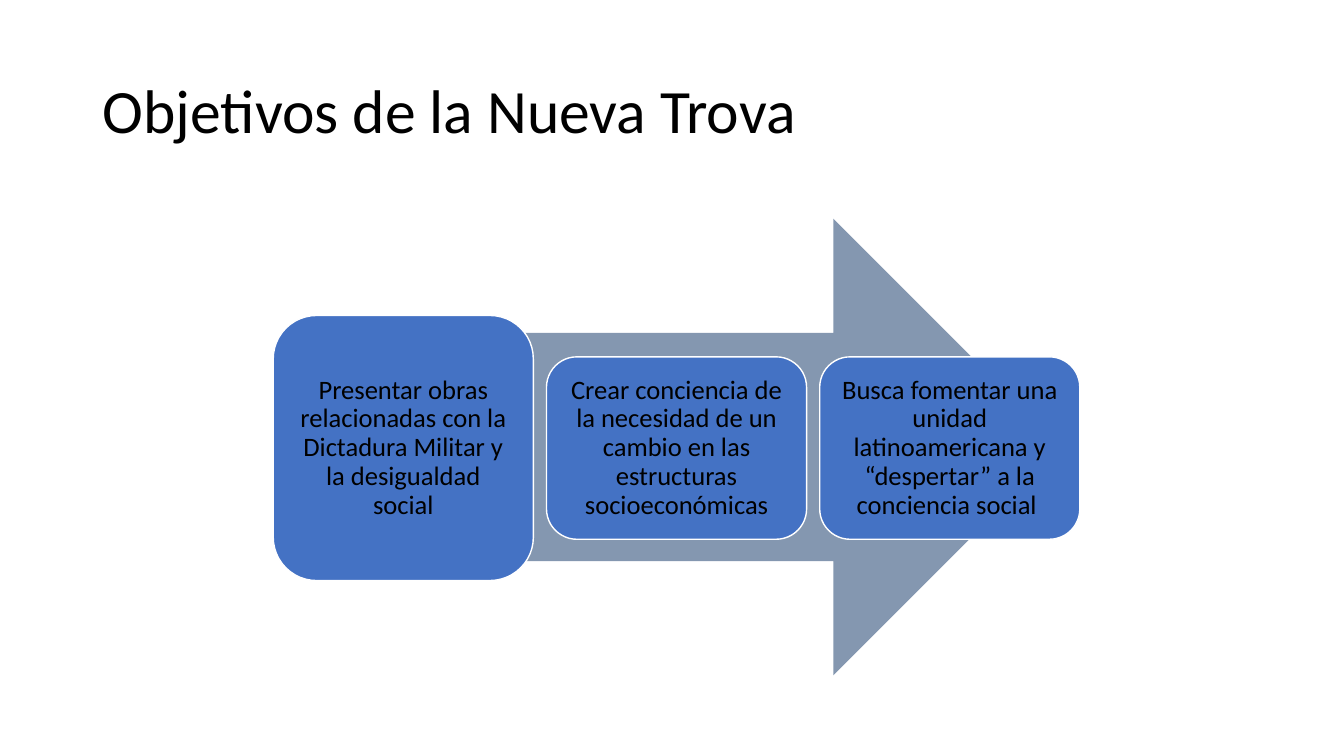
from pptx import Presentation
from pptx import util as u
from pptx.dml.color import RGBColor
from pptx.enum import shapes, text

PX = 9144  # EMU per px, 100 px to the inch
BLACK = RGBColor(0x00, 0x00, 0x00)
WHITE = RGBColor(0xFF, 0xFF, 0xFF)
BLUE = RGBColor(0x44, 0x72, 0xC4)
SLATE = RGBColor(0x84, 0x97, 0xB0)


def px(*lengths):
    return [u.Emu(n * PX) for n in lengths]


def write(sp, words, size, align):
    tf = sp.text_frame
    tf.word_wrap = True
    tf.vertical_anchor = text.MSO_ANCHOR.MIDDLE
    p = tf.paragraphs[0]
    p.text = words
    p.alignment = align
    p.line_spacing = 0.9
    p.font.name = "Calibri"
    p.font.size = u.Pt(size)
    p.font.color.rgb = BLACK
    return tf


prs = Presentation()
prs.slide_width, prs.slide_height = px(1333, 750)
s = prs.slides.add_slide(prs.slide_layouts[6])

# Title
title = s.shapes.add_textbox(*px(92, 40, 1150, 145))
write(title, "Objetivos de la Nueva Trova", 44, text.PP_ALIGN.LEFT)

# Arrow behind the goals
arrow = s.shapes.add_shape(shapes.MSO_SHAPE.RIGHT_ARROW, *px(289, 217, 764, 453))
arrow.shadow.inherit = False
arrow.fill.solid()
arrow.fill.fore_color.rgb = SLATE
arrow.line.fill.background()

# Goals: evenly spaced boxes centred on the arrow's axis
LEFT, STEP, WIDTH, AXIS = 271, 271, 258, 444
goals = [
    (263, "Presentar obras relacionadas con la Dictadura Militar y la desigualdad social"),
    (181, "Crear conciencia de la necesidad de un cambio en las estructuras socioeconómicas"),
    (181, "Busca fomentar una unidad latinoamericana y “despertar” a la conciencia social "),
]
for i, (height, words) in enumerate(goals):
    box = s.shapes.add_shape(shapes.MSO_SHAPE.ROUNDED_RECTANGLE,
                             *px(LEFT + i * STEP, AXIS - height // 2, WIDTH, height))
    box.shadow.inherit = False
    box.fill.solid()
    box.fill.fore_color.rgb = BLUE
    box.line.color.rgb = WHITE
    box.line.width = u.Pt(1)
    tf = write(box, words, 19, text.PP_ALIGN.CENTER)
    tf.margin_left, tf.margin_top, tf.margin_right, tf.margin_bottom = px(8, 8, 8, 8)

prs.save("out.pptx")
